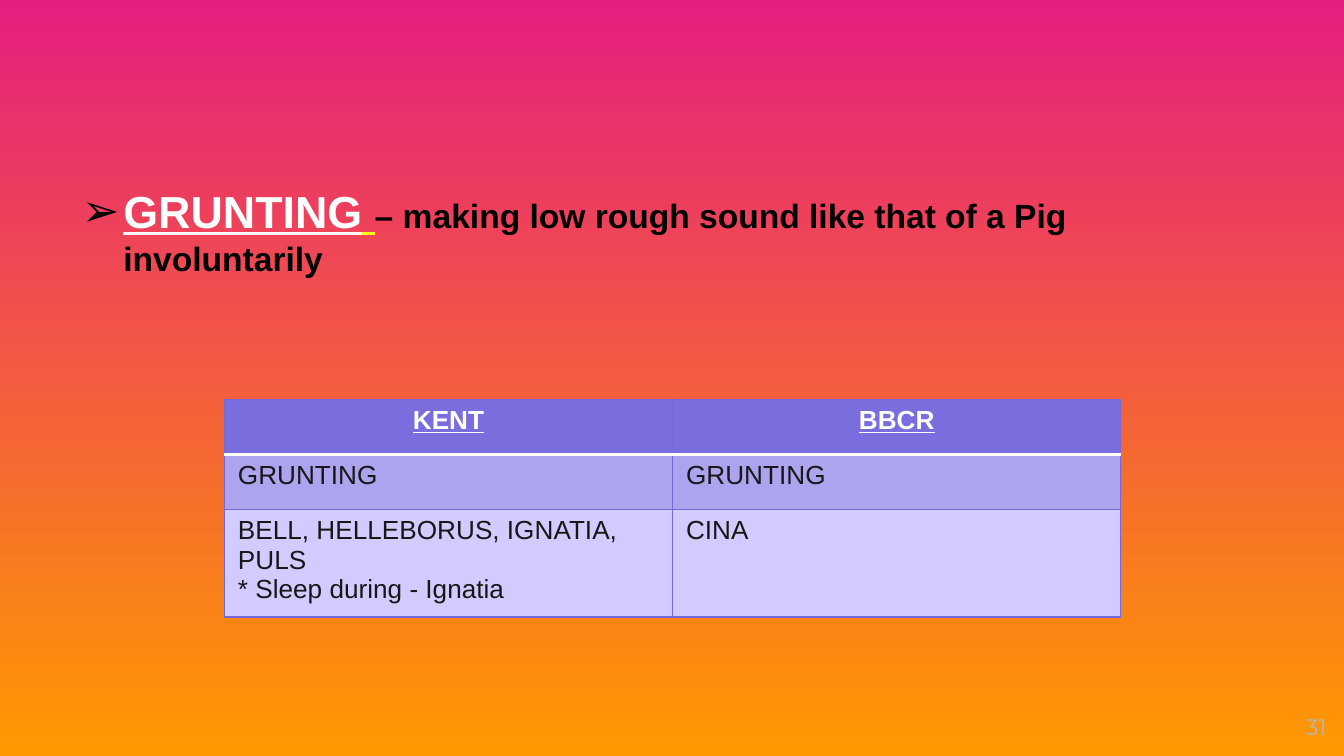
from dataclasses import dataclass

from lxml import etree
from pptx import Presentation
from pptx import util as u
from pptx.dml.color import RGBColor
from pptx.enum import text
from pptx.oxml import ns


@dataclass(frozen=True)
class Theme:
    body_font: str = "Arial"
    number_font: str = "Montserrat"
    sky: str = "E61E7F"
    ground: str = "FF9900"
    white: str = "FFFFFF"
    black: str = "000000"
    yellow: str = "FFFF00"
    ink: str = "171717"
    grey: str = "B7B7B7"
    header: str = "7A6DDD"
    band: str = "ADA4EF"
    plain: str = "D3CBFF"
    border: str = "7568DB"
    term_size: int = 24
    meaning_size: int = 18
    table_size: int = 14
    number_size: int = 12


def add_run(paragraph, words, *, font, size, color, bold=False, underline=False):
    run = paragraph.add_run()
    run.text = words
    run.font.name = font
    run.font.size = u.Pt(size)
    run.font.bold = bold
    run.font.underline = underline
    run.font.color.rgb = RGBColor.from_string(color)


def add_element(parent, tag, **attributes):
    return etree.SubElement(parent, ns.qn(tag), attributes)


class SlideBuilder:
    """Hold the theme and the current slide, and add each kind of element."""

    def __init__(self, theme, slide):
        self.theme = theme
        self.slide = slide

    def background(self):
        fill = self.slide.background.fill
        fill.gradient()
        fill.gradient_angle = 270
        for stop, color in zip(fill.gradient_stops, (self.theme.sky, self.theme.ground)):
            stop.color.rgb = RGBColor.from_string(color)

    def text_frame(self, left, top, width, height):
        box = self.slide.shapes.add_textbox(*map(u.Inches, (left, top, width, height)))
        box.text_frame.word_wrap = True
        return box.text_frame

    def definition(self, term, meaning):
        theme = self.theme
        frame = self.text_frame(0.51, 1.32, 8.98, 0.81)
        frame.auto_size = text.MSO_AUTO_SIZE.SHAPE_TO_FIT_TEXT
        paragraph = frame.paragraphs[0]
        self.bullet(paragraph, "➢", u.Inches(0.31))
        heading = dict(font=theme.body_font, size=theme.term_size, bold=True, underline=True)
        add_run(paragraph, term, color=theme.white, **heading)
        add_run(paragraph, " ", color=theme.yellow, **heading)
        add_run(paragraph, meaning, font=theme.body_font, size=theme.meaning_size,
                color=theme.black, bold=True)

    def bullet(self, paragraph, mark, indent):
        properties = paragraph._p.get_or_add_pPr()
        properties.set("marL", str(indent))
        properties.set("indent", str(-indent))
        color = add_element(properties, "a:buClr")
        add_element(color, "a:srgbClr", val=self.theme.black)
        add_element(properties, "a:buFont", typeface=self.theme.body_font)
        add_element(properties, "a:buChar", char=mark)

    def page_number(self, number):
        frame = self.text_frame(9.27, 5.19, 0.6, 0.43)
        frame.margin_left = frame.margin_right = frame.margin_top = frame.margin_bottom = 0
        frame.vertical_anchor = text.MSO_ANCHOR.MIDDLE
        paragraph = frame.paragraphs[0]
        paragraph.alignment = text.PP_ALIGN.RIGHT
        add_run(paragraph, number, font=self.theme.number_font,
                size=self.theme.number_size, color=self.theme.grey)

    def remedy_table(self, rows, heights):
        theme = self.theme
        place = map(u.Inches, (1.67, 2.97, 6.67, sum(heights)))
        table = self.slide.shapes.add_table(len(rows), len(rows[0]), *place).table
        fills = (theme.header, theme.band, theme.plain)
        for r, (entries, height, fill) in enumerate(zip(rows, heights, fills)):
            table.rows[r].height = u.Inches(height)
            for c, entry in enumerate(entries):
                self.cell(table.cell(r, c), entry, fill, r)

    def cell(self, cell, entry, fill, row):
        theme = self.theme
        header = row == 0
        for i, line in enumerate(entry.split("\n")):
            frame = cell.text_frame
            paragraph = frame.add_paragraph() if i else frame.paragraphs[0]
            paragraph.alignment = text.PP_ALIGN.CENTER if header else text.PP_ALIGN.LEFT
            add_run(paragraph, line, font=theme.body_font, size=theme.table_size,
                    color=theme.white if header else theme.ink,
                    bold=header, underline=header)
        white_side = {0: "B", 1: "T"}.get(row)
        for side in "LRTB":
            rule = (theme.white, 2) if side == white_side else (theme.border, 0.75)
            self.border(cell, side, *rule)
        cell.fill.solid()
        cell.fill.fore_color.rgb = RGBColor.from_string(fill)

    def border(self, cell, side, color, width):
        properties = cell._tc.get_or_add_tcPr()
        line = add_element(properties, f"a:ln{side}", w=str(u.Pt(width)))
        add_element(add_element(line, "a:solidFill"), "a:srgbClr", val=color)


def main():
    deck = Presentation()
    deck.slide_width = u.Inches(10)
    deck.slide_height = deck.slide_width * 9 // 16
    blank = deck.slide_layouts[6]
    builder = SlideBuilder(Theme(), deck.slides.add_slide(blank))
    builder.background()
    builder.page_number("31")
    builder.definition("GRUNTING", "– making low rough sound like that of a Pig involuntarily")
    builder.remedy_table(
        [
            ("KENT", "BBCR"),
            ("GRUNTING", "GRUNTING"),
            ("BELL, HELLEBORUS, IGNATIA, PULS\n* Sleep during - Ignatia", "CINA"),
        ],
        heights=(0.41, 0.41, 0.79),
    )
    deck.save("out.pptx")


if __name__ == "__main__":
    main()
